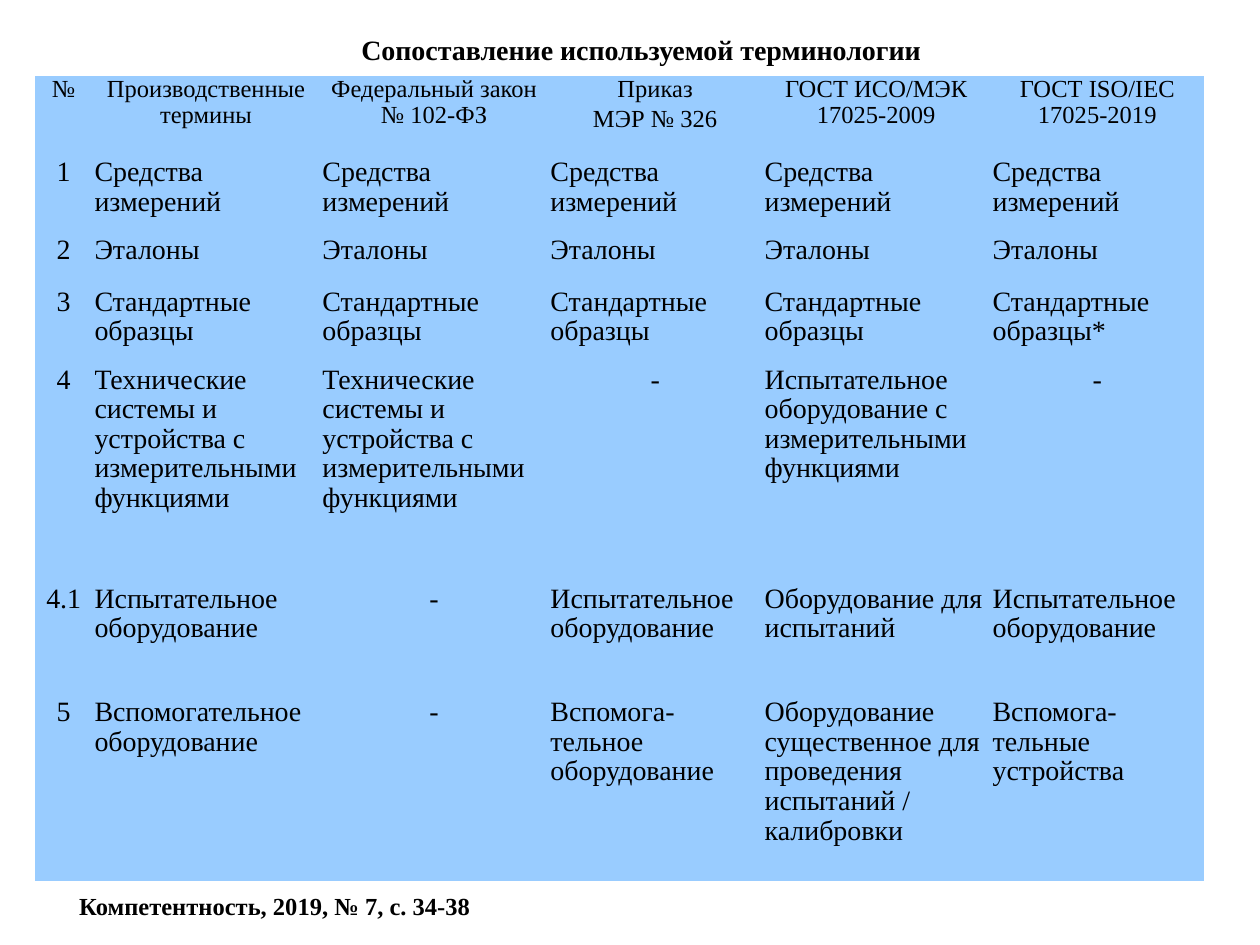
from pptx import Presentation
from pptx import util as u
from pptx.dml.color import RGBColor
from pptx.enum import text as t
from pptx.oxml import parse_xml
from pptx.oxml.ns import nsdecls

BLACK = RGBColor(0, 0, 0)
BLUE = RGBColor(0x99, 0xCC, 0xFF)
FONT = "Times New Roman"
LEFT, MID = t.PP_ALIGN.LEFT, t.PP_ALIGN.CENTER

COLS = [32.4, 130.3, 130.3, 122.4, 130.3, 122.4]
ROWS = [46.1, 44.6, 29.5, 44.6, 125.3, 64.8, 105.1]
TOOLS, REFS, MATTER = "Средства измерений", "Эталоны", "Стандартные образцы"
TECH = "Технические системы и устройства с измерительными функциями"
TEST = "Испытательное оборудование"
HEAD = ["№", "Производственные термины", "Федеральный закон № 102-ФЗ",
        "Приказ\nМЭР № 326", "ГОСТ ИСО/МЭК 17025-2009",
        "ГОСТ ISO/IEC 17025-2019"]
BODY = [
    ["1"] + [TOOLS] * 5,
    ["2"] + [REFS] * 5,
    ["3"] + [MATTER] * 4 + [MATTER + "*"],
    ["4", TECH, TECH, "-", TEST + " с измерительными функциями", "-"],
    ["4.1", TEST, "-", TEST, "Оборудование для испытаний", TEST],
    ["5", "Вспомогательное оборудование", "-", "Вспомога-тельное оборудование",
     "Оборудование существенное для проведения испытаний / калибровки",
     "Вспомога-тельные устройства"],
]


def write(frame, words, size=16, bold=False, align=LEFT, lines=(1,),
          before=0, after=0):
    """Fill a text frame, one paragraph per line of words."""
    frame.word_wrap = True
    for i, line in enumerate(words.split("\n")):
        par = frame.add_paragraph() if i else frame.paragraphs[0]
        par.alignment = align
        par.line_spacing = lines[min(i, len(lines) - 1)]
        par.space_before, par.space_after = u.Pt(before), u.Pt(after)
        run = par.add_run()
        run.text = line
        font = run.font
        font.name, font.size, font.bold = FONT, u.Pt(size), bold
        font.color.rgb = BLACK


def label(slide, box, words, **form):
    """Place a text box."""
    shape = slide.shapes.add_textbox(*map(u.Pt, box))
    write(shape.text_frame, words, **form)


def style(cell):
    """Give a cell its margins, fill and hidden borders."""
    cell.margin_left = cell.margin_right = u.Pt(1.4)
    cell.margin_top, cell.margin_bottom = u.Pt(0.7), u.Pt(0)
    props = cell._tc.get_or_add_tcPr()
    for side in ("lnL", "lnR", "lnT", "lnB"):
        props.append(parse_xml(
            f'<a:{side} {nsdecls("a")} w="0"><a:noFill/></a:{side}>'))
    cell.fill.solid()
    cell.fill.fore_color.rgb = BLUE


def grid(slide, left, top):
    """Build the table of terms."""
    box = map(u.Pt, (left, top, sum(COLS), sum(ROWS)))
    table = slide.shapes.add_table(len(ROWS), len(COLS), *box).table
    table.first_row = table.horz_banding = False
    for col, width in zip(table.columns, COLS):
        col.width = u.Pt(width)
    for row, height in zip(table.rows, ROWS):
        row.height = u.Pt(height)
    for r, terms in enumerate([HEAD] + BODY):
        for c, term in enumerate(terms):
            cell = table.cell(r, c)
            style(cell)
            mid = r == 0 or c == 0 or term == "-"
            write(cell.text_frame, term, size=16 if r else 14,
                  align=MID if mid else LEFT, lines=(0.95, 1.09))


def main():
    """Build and save the slide."""
    deck = Presentation()
    deck.slide_width, deck.slide_height = u.Pt(720), u.Pt(540)
    slide = deck.slides.add_slide(deck.slide_layouts[6])
    label(slide, (42.5, 15.1, 648, 33.8),
          "Сопоставление используемой терминологии",
          bold=True, align=MID, before=6.4, after=14.2)
    grid(slide, 20.2, 43.4)
    label(slide, (38.2, 505.4, 283.7, 23.8),
          "Компетентность, 2019, № 7, с. 34-38", size=14, bold=True)
    deck.save("out.pptx")


if __name__ == "__main__":
    main()
